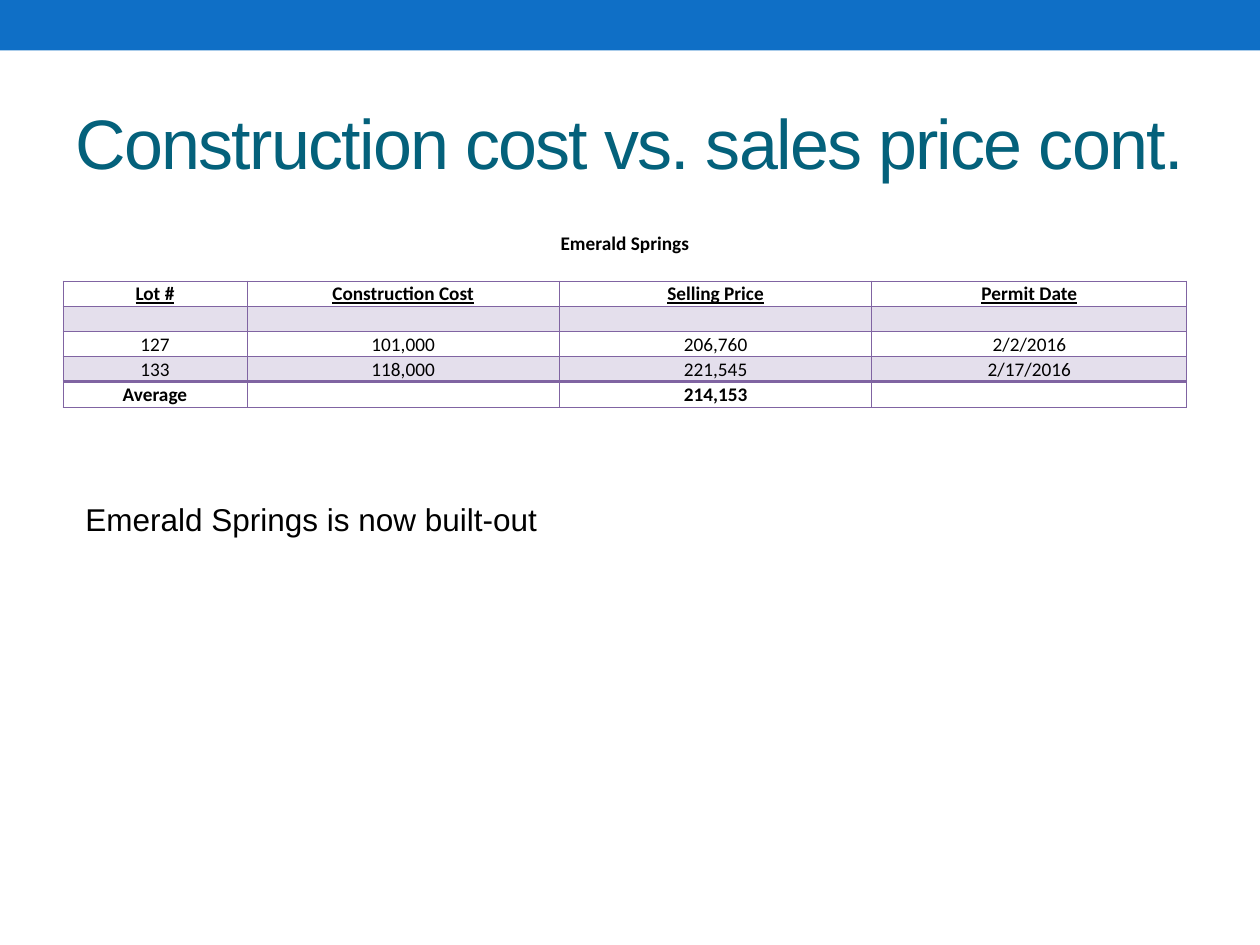
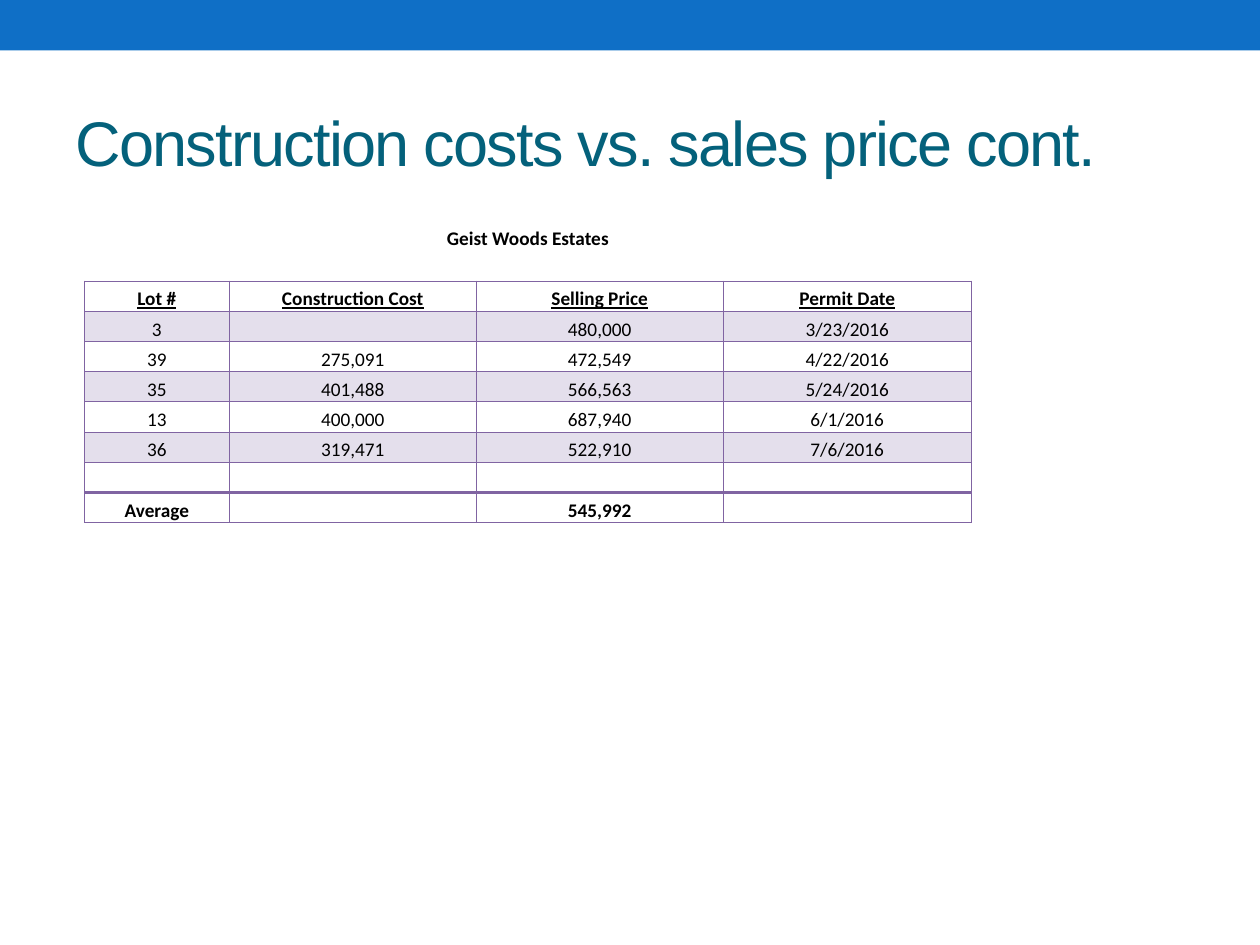
from lxml import etree
from pptx import Presentation
from pptx.dml.color import RGBColor
from pptx.enum.shapes import MSO_SHAPE
from pptx.enum.text import MSO_ANCHOR, MSO_AUTO_SIZE, PP_ALIGN
from pptx.oxml.ns import qn
from pptx.util import Inches, Pt

RECTANGLE = MSO_SHAPE.RECTANGLE
MIDDLE, BOTTOM = MSO_ANCHOR.MIDDLE, MSO_ANCHOR.BOTTOM
LEFT, CENTER = PP_ALIGN.LEFT, PP_ALIGN.CENTER
NO_AUTOFIT = MSO_AUTO_SIZE.NONE
WIDTH, HEIGHT = 10, 7.5
BLUE, TEAL, PURPLE, LILAC, BLACK = "0F6FC6", "04617B", "8064A2", "E4DFEC", "000000"
THIN, THICK = 0.5, 2
PLAIN_STYLE = "{2D5ABB26-0587-4C30-8999-92F81FD0307C}"
CELL_SIZE = 11
HEADER_ROW = 2
HEADINGS = ["Lot #", "Construction Cost", "Selling Price", "Permit Date"]


def color(value):
    """Turn a hex string into a colour."""
    return RGBColor.from_string(value)


def set_all(target, values):
    """Set every attribute named in a dict."""
    for name, value in values.items():
        setattr(target, name, value)


def write(frame, text, ink, align=LEFT, **font):
    """Fill the first paragraph of a frame and return its run."""
    para = frame.paragraphs[0]
    para.alignment = align
    span = para.add_run()
    span.text = text
    set_all(span.font, font)
    span.font.color.rgb = color(ink)
    return span


def add_band(deck, page):
    """Put the top band behind everything on the master."""
    band = page.shapes.add_shape(RECTANGLE, 0, 0, Inches(WIDTH), Inches(0.4))
    band.shadow.inherit = False
    band.fill.solid()
    band.fill.fore_color.rgb = color(BLUE)
    band.line.fill.background()
    deck.slide_master.shapes._spTree.insert(2, band._element)


def add_page(deck, title, size):
    """Add a title-only page with its styled title."""
    page = deck.slides.add_slide(deck.slide_layouts[5])
    box = page.shapes.title
    set_all(box, {"left": Inches(0.5), "top": Inches(0.58),
                  "width": Inches(WIDTH - 1), "height": Inches(1.08)})
    set_all(box.text_frame, {"vertical_anchor": MIDDLE, "word_wrap": True,
                             "auto_size": NO_AUTOFIT})
    span = write(box.text_frame, title, TEAL, name="Arial", size=Pt(size))
    span.font._element.set("spc", "-100")
    return page


def add_border(cell, side, weight):
    """Draw one side (L, R, T or B) of a cell."""
    properties = cell._tc.get_or_add_tcPr()
    line = etree.SubElement(properties, qn("a:ln" + side), w=str(Pt(weight)))
    fill = etree.SubElement(line, qn("a:solidFill"))
    etree.SubElement(fill, qn("a:srgbClr"), val=PURPLE)


def fill_cell(cell, text, inset, **font):
    """Set a cell's margins, fill and text."""
    set_all(cell, {"vertical_anchor": BOTTOM, "margin_left": Inches(inset),
                   "margin_right": Inches(inset), "margin_top": Inches(inset),
                   "margin_bottom": 0})
    if text:
        write(cell.text_frame, text, BLACK, CENTER, name="Calibri", size=Pt(CELL_SIZE), **font)
    else:
        etree.SubElement(cell.text_frame.paragraphs[0]._p, qn("a:endParaRPr"),
                         sz=str(CELL_SIZE * 100))


def add_price_table(page, place, name, lots, average, columns, row_height, inset, tail=0):
    """Add a subdivision's table: name, gap, headings, lots and average."""
    rows = [[name], [], HEADINGS, *lots, ["Average", "", average]] + [[]] * tail
    last = len(rows) - tail - 1
    left, top = place
    frame = page.shapes.add_table(len(rows), len(columns), Inches(left), Inches(top),
                                  Inches(sum(columns)), Inches(row_height * len(rows)))
    table = frame.table
    set_all(table, {"first_row": False, "horz_banding": False})
    table._tbl.tblPr.find(qn("a:tableStyleId")).text = PLAIN_STYLE
    for column, width in zip(table.columns, columns):
        column.width = Inches(width)
    for r, values in enumerate(rows):
        table.rows[r].height = Inches(row_height)
        for c in range(len(columns)):
            cell = table.cell(r, c)
            inside = HEADER_ROW <= r <= last and c < len(HEADINGS)
            if inside:
                weights = {"L": THIN, "R": THIN, "T": THICK if r == last else THIN,
                           "B": THICK if r == last - 1 else THIN}
                for side, weight in weights.items():
                    add_border(cell, side, weight)
            if inside and r % 2 and r < last:
                cell.fill.solid()
                cell.fill.fore_color.rgb = color(LILAC)
            else:
                cell.fill.background()
            text = values[c] if c < len(values) else ""
            fill_cell(cell, text, inset, bold=r in (0, HEADER_ROW, last),
                      underline=r == HEADER_ROW)
    table.cell(0, 0).merge(table.cell(0, len(HEADINGS) - 1))


def add_note(page, text, left, top, width, height):
    """Add a plain line of text."""
    box = page.shapes.add_textbox(Inches(left), Inches(top), Inches(width), Inches(height))
    box.text_frame.word_wrap = True
    write(box.text_frame, text, BLACK, name="Arial", size=Pt(18))


def main():
    """Build and save the deck."""
    deck = Presentation()
    set_all(deck, {"slide_width": Inches(WIDTH), "slide_height": Inches(HEIGHT)})

    emerald = add_page(deck, "Construction cost vs. sales price cont.", 40)
    add_band(deck, emerald)
    emerald_lots = [[], ["127", "101,000", "206,760", "2/2/2016"],
                    ["133", "118,000", "221,545", "2/17/2016"]]
    add_price_table(emerald, (0.5, 1.83), "Emerald Springs", emerald_lots, "214,153",
                    [1.46, 2.48, 2.48, 2.5], 0.2, 0.01, tail=1)
    add_note(emerald, "Emerald Springs is now built-out", 0.58, 3.92, 6.75, 0.4)

    geist = add_page(deck, "Construction costs vs. sales price cont.", 36)
    geist_lots = [["3", "", "480,000", "3/23/2016"],
                  ["39", "275,091", "472,549", "4/22/2016"],
                  ["35", "401,488", "566,563", "5/24/2016"],
                  ["13", "400,000", "687,940", "6/1/2016"],
                  ["36", "319,471", "522,910", "7/6/2016"], []]
    add_price_table(geist, (0.67, 1.75), "Geist Woods Estates", geist_lots, "545,992",
                    [1.15, 1.96, 1.96, 1.97, 1.13], 0.24, 0)

    deck.save("out.pptx")


if __name__ == "__main__":
    main()
